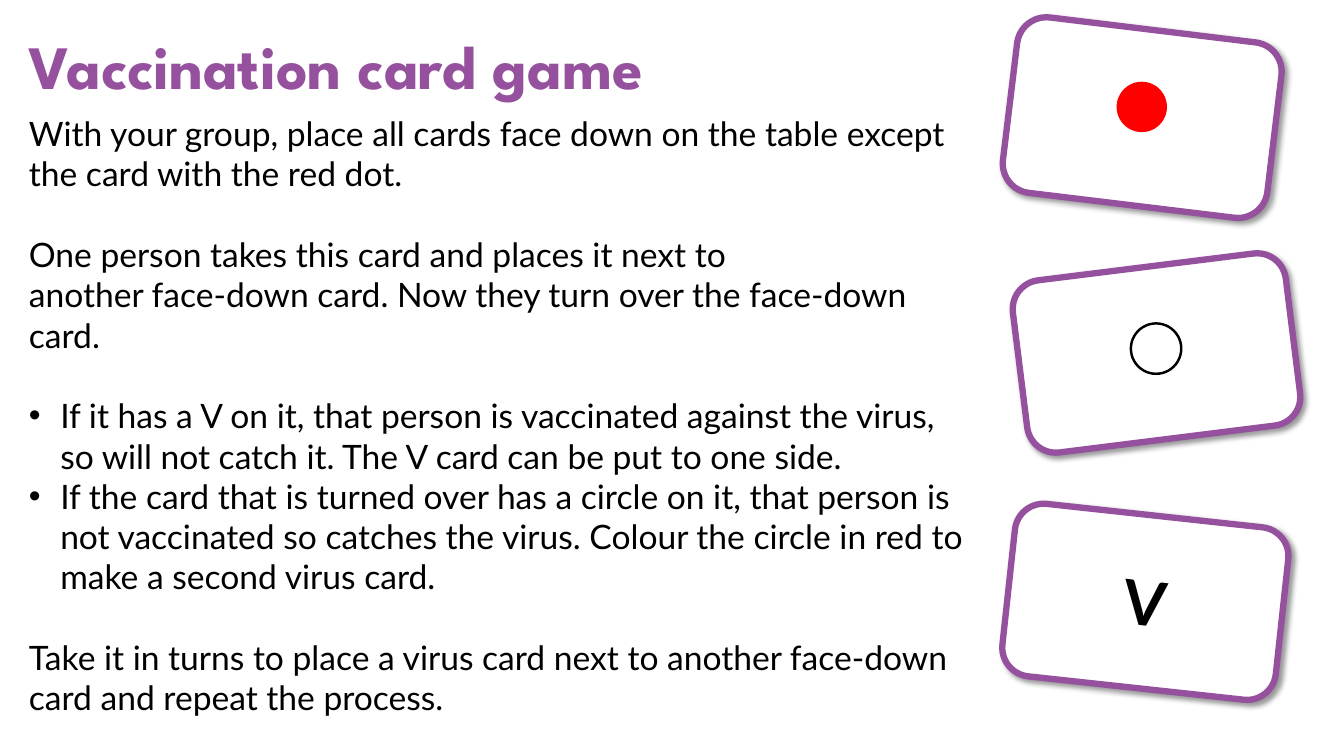
"""Build the vaccination card game slide."""
from dataclasses import dataclass

from lxml import etree
from pptx import Presentation
from pptx import util as u
from pptx.dml.color import RGBColor
from pptx.enum import shapes, text
from pptx.oxml.ns import qn

COLOURS = {"purple": "95519E", "white": "FFFFFF", "black": "000000", "red": "FF0000"}
BODY_SIZE = 24
SECTION_GAP = 28.8
BULLET_INDENT = u.Cm(0.79)


@dataclass
class Card:
    left: float
    top: float
    width: float
    height: float
    rotation: float
    letter: str = ""


@dataclass
class Dot:
    left: float
    top: float
    fill: str = ""
    line: str = ""


@dataclass
class Line:
    words: str
    new_section: bool = False
    bullet: bool = False


CARDS = [
    Card(25.68, 6.71, 6.93, 4.37, 352.9),
    Card(25.43, 0.74, 6.71, 4.45, 6.9),
    Card(25.4, 12.98, 6.93, 4.37, 6.2, "V"),
]
DOTS = [Dot(28.5, 8.15, line="black"), Dot(28.14, 2.06, fill="red")]
TITLE = [Line("Vaccination card game")]
RULES = [
    Line("With your group, place all cards face down on the table except the card with the red dot."),
    Line("One person takes this card and places it next to", new_section=True),
    Line("another face-down card. Now they turn over the face-down card."),
    Line("If it has a V on it, that person is vaccinated against the virus, so will not catch it. "
         "The V card can be put to one side.", new_section=True, bullet=True),
    Line("If the card that is turned over has a circle on it, that person is not vaccinated so "
         "catches the virus. Colour the circle in red to make a second virus card.", bullet=True),
    Line("Take it in turns to place a virus card next to another face-down card and repeat "
         "the process.", new_section=True),
]


def colour(name: str) -> RGBColor:
    return RGBColor.from_string(COLOURS[name])


def set_font(paragraph, name: str, size: float, shade: str, bold: bool = False) -> None:
    font = paragraph.font
    font.name, font.size, font.bold = name, u.Pt(size), bold
    font.color.rgb = colour(shade)


def add_bullet(paragraph) -> None:
    properties = paragraph._p.get_or_add_pPr()
    properties.set("marL", str(BULLET_INDENT))
    properties.set("indent", str(-BULLET_INDENT))
    etree.SubElement(properties, qn("a:buFont"), typeface="Arial")
    etree.SubElement(properties, qn("a:buChar"), char="•")


def add_shadow(shape) -> None:
    effects = shape._element.spPr.find(qn("a:effectLst"))
    shadow = etree.SubElement(
        effects, qn("a:outerShdw"), blurRad=str(u.Pt(4)), dist=str(u.Pt(3)),
        dir=str(45 * 60000), algn="tl", rotWithShape="0")
    black = etree.SubElement(shadow, qn("a:srgbClr"), val=COLOURS["black"])
    etree.SubElement(black, qn("a:alpha"), val="40000")


def add_outlined(page, kind, bounds: tuple, fill: str, line: str, weight: float):
    shape = page.shapes.add_shape(kind, *map(u.Cm, bounds))
    shape.shadow.inherit = False
    if fill:
        shape.fill.solid()
        shape.fill.fore_color.rgb = colour(fill)
    else:
        shape.fill.background()
    if line:
        shape.line.color.rgb = colour(line)
        shape.line.width = u.Pt(weight)
    else:
        shape.line.fill.background()
    return shape


def draw_card(page, card: Card) -> None:
    bounds = (card.left, card.top, card.width, card.height)
    shape = add_outlined(page, shapes.MSO_SHAPE.ROUNDED_RECTANGLE, bounds, "white", "purple", 4.5)
    shape.rotation = card.rotation
    add_shadow(shape)
    if card.letter:
        shape.text_frame.vertical_anchor = text.MSO_ANCHOR.MIDDLE
        paragraph = shape.text_frame.paragraphs[0]
        paragraph.text = card.letter
        paragraph.alignment = text.PP_ALIGN.CENTER
        set_font(paragraph, "Lato", 44, "black", bold=True)


def draw_dot(page, dot: Dot) -> None:
    bounds = (dot.left, dot.top, 1.27, 1.27)
    add_outlined(page, shapes.MSO_SHAPE.OVAL, bounds, dot.fill, dot.line, 1.75)


def draw_text(page, bounds: tuple, lines: list[Line], font: str, size: float,
              shade: str, bold: bool = False) -> None:
    box = page.shapes.add_textbox(*map(u.Cm, bounds))
    frame = box.text_frame
    frame.word_wrap = True
    frame.auto_size = text.MSO_AUTO_SIZE.SHAPE_TO_FIT_TEXT
    for index, line in enumerate(lines):
        paragraph = frame.add_paragraph() if index else frame.paragraphs[0]
        paragraph.text = line.words
        if line.bullet:
            add_bullet(paragraph)
        if line.new_section:
            paragraph.space_before = u.Pt(SECTION_GAP)
        set_font(paragraph, font, size, shade, bold)


def main() -> None:
    deck = Presentation()
    deck.slide_width, deck.slide_height = u.Cm(33.87), u.Cm(19.05)
    page = deck.slides.add_slide(deck.slide_layouts[6])
    draw_text(page, (0.48, 0.58, 33.68, 2.13), TITLE, "League Spartan", 44, "purple", bold=True)
    for card in CARDS:
        draw_card(page, card)
    for dot in DOTS:
        draw_dot(page, dot)
    draw_text(page, (0.48, 2.72, 24.26, 15.82), RULES, "Lato", BODY_SIZE, "black")
    deck.save("out.pptx")


if __name__ == "__main__":
    main()
